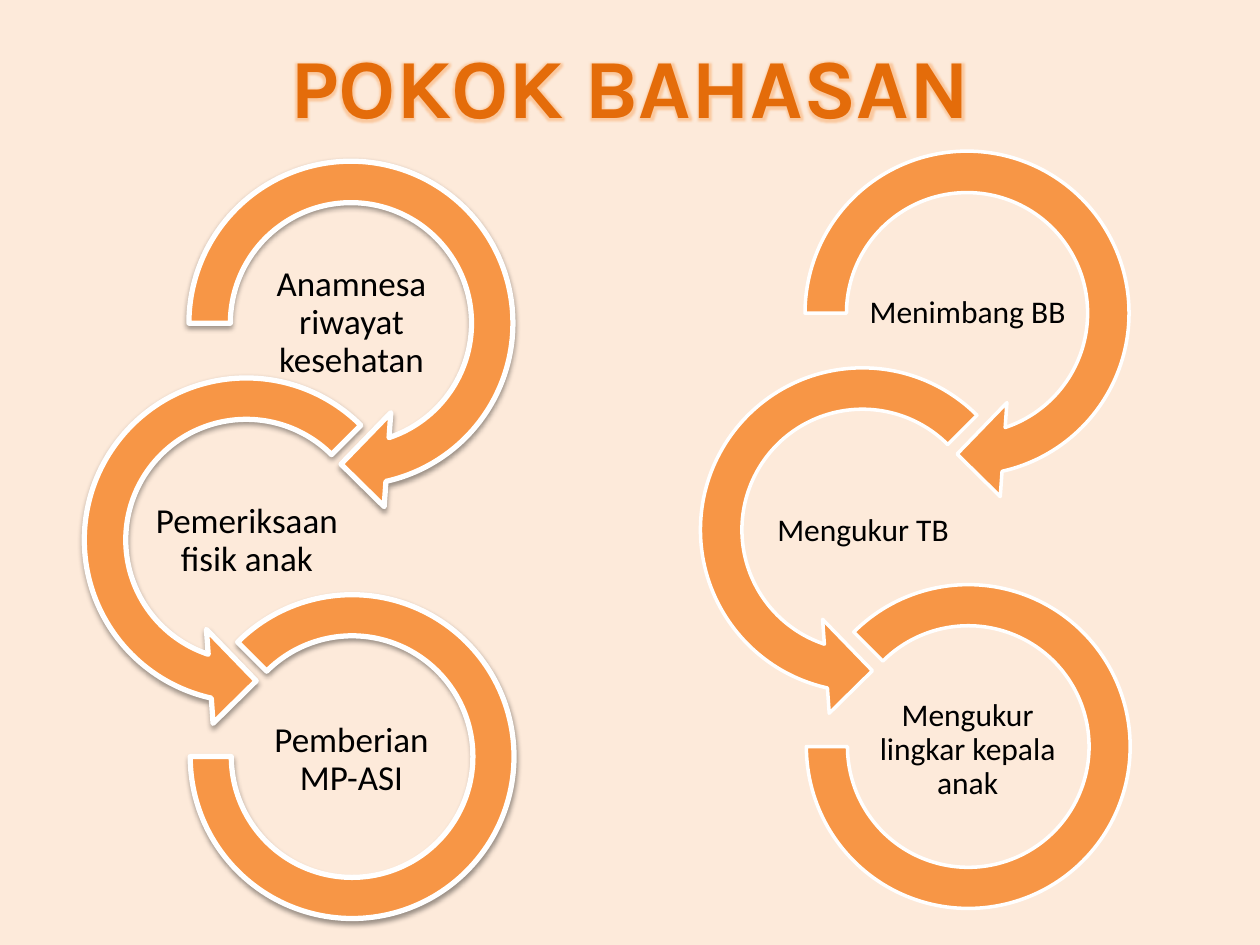
import pptx
import pptx.dml.color
import pptx.enum.shapes
import pptx.enum.text
import pptx.oxml
import pptx.oxml.ns
import pptx.util
from dataclasses import dataclass

Inches = pptx.util.Inches
Pt = pptx.util.Pt
SHAPE = pptx.enum.shapes.MSO_SHAPE


@dataclass(frozen=True)
class Theme:
    background: str = "FDEADA"
    title: str = "E46C0A"
    glow: str = "F79646"
    ring: str = "F79646"
    outline: str = "FFFFFF"
    text: str = "000000"
    shadow: str = "000000"
    title_font: str = "Karla"
    body_font: str = "Calibri"
    title_size: int = 48


THEME = Theme()

RINGS = (
    (SHAPE.CIRCULAR_ARROW, (0.11, 11.42, 45, 108, 0.125), (0, 0), 2.99, (0.67, 1.08)),
    (SHAPE.LEFT_CIRCULAR_ARROW, (0.11, 11.42, 63, 189, 0.125), (-0.83, 1.72), 2.99, (-0.16, 2.81)),
    (SHAPE.BLOCK_ARC, (135, 108, 0.127), (0.22, 3.65), 2.57, (0.67, 4.55)),
)
LABEL_SIZE = (1.66, 0.83)


def rgb(value):
    return pptx.dml.color.RGBColor.from_string(value)


def effect(kind, attributes, color, alpha):
    return pptx.oxml.parse_xml(
        f'<a:effectLst {pptx.oxml.ns.nsdecls("a")}><a:{kind} {attributes}>'
        f'<a:srgbClr val="{color}"><a:alpha val="{alpha * 1000}"/></a:srgbClr>'
        f"</a:{kind}></a:effectLst>"
    )


def add_run(paragraph, text, font_name, size, color, bold=False):
    run = paragraph.add_run()
    run.text = text
    run.font.name = font_name
    run.font.size = Pt(size)
    run.font.bold = bold
    run.font.color.rgb = rgb(color)
    return run


def set_title(slide, text):
    title = slide.shapes.title
    title.left, title.top = Inches(0.5), Inches(0.05)
    title.width, title.height = Inches(9), Inches(1.25)
    title.text_frame.vertical_anchor = pptx.enum.text.MSO_ANCHOR.MIDDLE
    paragraph = title.text_frame.paragraphs[0]
    paragraph.alignment = pptx.enum.text.PP_ALIGN.CENTER
    run = add_run(paragraph, text, THEME.title_font, THEME.title_size, THEME.title, True)
    glow = effect("glow", f'rad="{Pt(6)}"', THEME.glow, 40)
    run.font.fill._xPr.find(pptx.oxml.ns.qn("a:solidFill")).addnext(glow)


def add_ring(group, preset, adjustments, left, top, size, outline_width, shadowed):
    ring = group.shapes.add_shape(preset, Inches(left), Inches(top), Inches(size), Inches(size))
    for index, value in enumerate(adjustments):
        ring.adjustments[index] = value
    ring.fill.solid()
    ring.fill.fore_color.rgb = rgb(THEME.ring)
    ring.line.color.rgb = rgb(THEME.outline)
    ring.line.width = Pt(outline_width)
    ring.shadow.inherit = False
    if shadowed:
        attributes = f'blurRad="{Pt(3.1)}" dist="{Pt(1.6)}" dir="5400000" rotWithShape="0"'
        properties = ring._element.spPr
        empty = properties.find(pptx.oxml.ns.qn("a:effectLst"))
        properties.replace(empty, effect("outerShdw", attributes, THEME.shadow, 38))


def add_label(group, text, left, top, size):
    width, height = LABEL_SIZE
    label = group.shapes.add_textbox(Inches(left), Inches(top), Inches(width), Inches(height))
    frame = label.text_frame
    frame.word_wrap = True
    frame.vertical_anchor = pptx.enum.text.MSO_ANCHOR.MIDDLE
    frame.margin_left = frame.margin_right = Inches(0.01)
    frame.margin_top = frame.margin_bottom = Inches(0.01)
    paragraph = frame.paragraphs[0]
    paragraph.alignment = pptx.enum.text.PP_ALIGN.CENTER
    paragraph.line_spacing = 0.9
    add_run(paragraph, text, THEME.body_font, size, THEME.text)


def add_chain(slide, topics, left, top, text_size, outline_width, shadowed):
    group = slide.shapes.add_group_shape()
    for topic, (preset, adjustments, offset, size, label_offset) in zip(topics, RINGS):
        add_ring(group, preset, adjustments, left + offset[0], top + offset[1],
                 size, outline_width, shadowed)
        add_label(group, topic, left + label_offset[0], top + label_offset[1], text_size)


def main():
    presentation = pptx.Presentation()
    presentation.slide_width, presentation.slide_height = Inches(10), Inches(7.5)
    slide = presentation.slides.add_slide(presentation.slide_layouts[5])
    slide.background.fill.solid()
    slide.background.fill.fore_color.rgb = rgb(THEME.background)
    set_title(slide, "POKOK BAHASAN")
    add_chain(slide, ("Anamnesa riwayat kesehatan", "Pemeriksaan fisik anak", "Pemberian MP-ASI"),
              1.29, 1.07, text_size=20, outline_width=3, shadowed=True)
    add_chain(slide, ("Menimbang BB", "Mengukur TB", "Mengukur lingkar kepala anak"),
              6.18, 0.99, text_size=18, outline_width=2, shadowed=False)
    presentation.save("out.pptx")


if __name__ == "__main__":
    main()
